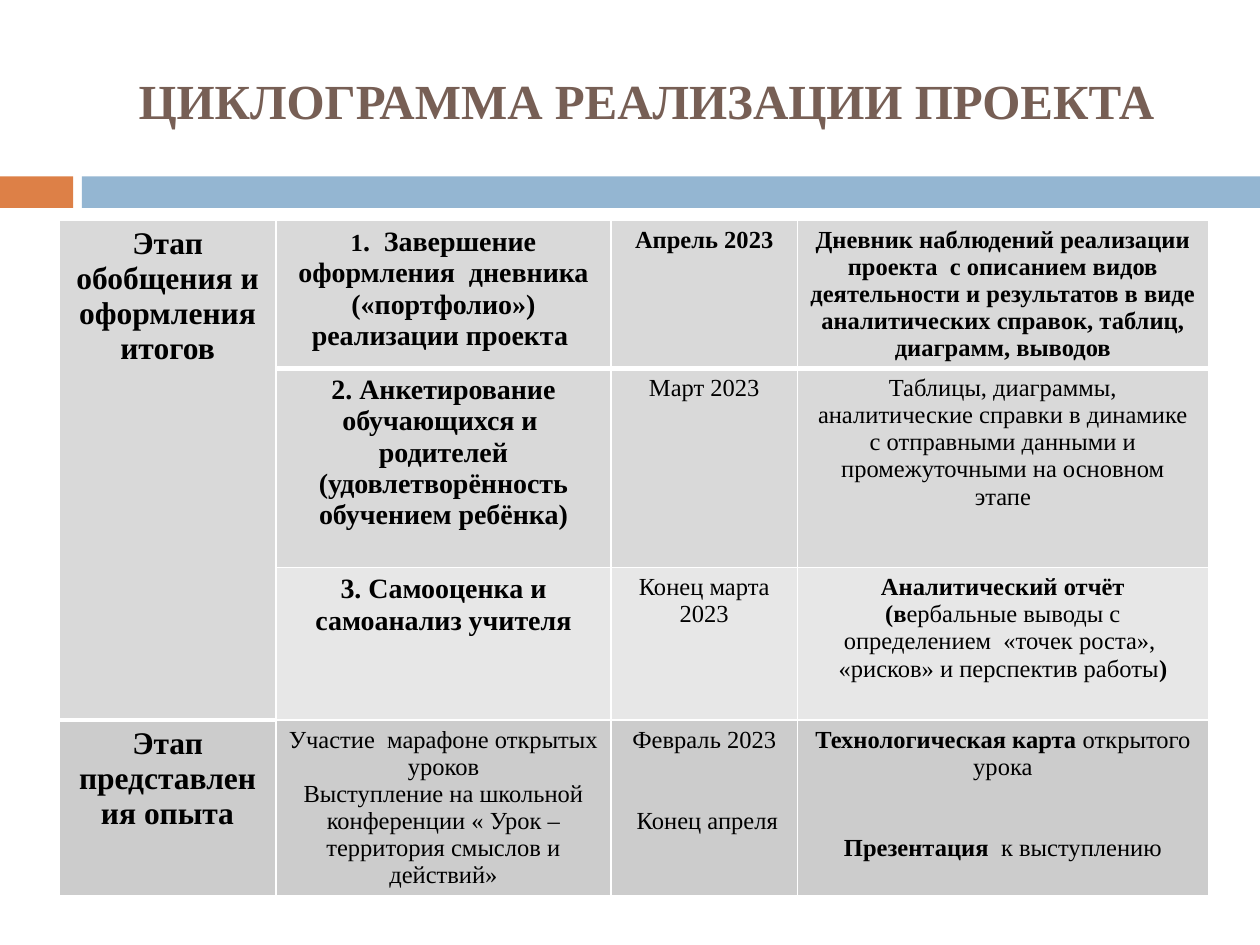
from dataclasses import dataclass

from lxml import etree
from pptx import Presentation, util as u
from pptx.dml.color import RGBColor
from pptx.enum import shapes, text
from pptx.oxml.ns import qn


@dataclass(frozen=True)
class Theme:
    font: str = "Times New Roman"
    title: str = "775F55"
    ink: str = "000000"
    line: str = "FFFFFF"
    accent: str = "DD8047"
    band: str = "94B6D2"
    grey: str = "D9D9D9"
    light: str = "E7E7E7"
    dark: str = "CCCCCC"
    head: int = 28
    stage: int = 18
    task: int = 16
    body: int = 14
    gap: int = 31
    thin: int = 1
    thick: int = 3


class Deck:
    def __init__(self, theme):
        self.theme = theme
        self.prs = Presentation()
        self.prs.slide_width, self.prs.slide_height = u.Inches(10), u.Inches(7.5)
        self.slide = self.prs.slides.add_slide(self.prs.slide_layouts[5])

    def run(self, para, words, size, bold, color):
        run = para.add_run()
        run.text = words
        font = run.font
        font.name, font.size, font.bold = self.theme.font, u.Pt(size), bold
        font.color.rgb = RGBColor.from_string(color)

    def title(self, words, *box):
        shape = self.slide.shapes.title
        shape.left, shape.top, shape.width, shape.height = map(u.Inches, box)
        frame = shape.text_frame
        frame.vertical_anchor = text.MSO_ANCHOR.MIDDLE
        para = frame.paragraphs[0]
        para.alignment = text.PP_ALIGN.CENTER
        self.run(para, words, self.theme.head, True, self.theme.title)

    def bar(self, color, *box):
        shape = self.slide.shapes.add_shape(
            shapes.MSO_SHAPE.RECTANGLE, *map(u.Inches, box))
        shape.shadow.inherit = False
        shape.fill.solid()
        shape.fill.fore_color.rgb = RGBColor.from_string(color)
        shape.line.fill.background()

    def edge(self, cell, side, width):
        """Draw one side (L, R, T or B) of a cell; call before filling it."""
        line = etree.SubElement(cell._tc.get_or_add_tcPr(), qn("a:ln" + side),
                                w=str(u.Pt(width)))
        fill = etree.SubElement(line, qn("a:solidFill"))
        etree.SubElement(fill, qn("a:srgbClr"), val=self.theme.line)

    def label(self, cell, paras):
        """Add paragraphs given as (space before, runs)."""
        frame = cell.text_frame
        for i, (space, runs) in enumerate(paras):
            para = frame.add_paragraph() if i else frame.paragraphs[0]
            para.alignment = text.PP_ALIGN.CENTER
            if space:
                para.space_before = u.Pt(space)
            for words, size, bold in runs:
                self.run(para, words, size, bold, self.theme.ink)

    def table(self, left, top, cols, rows, fills, cells, merge):
        grid = self.slide.shapes.add_table(
            len(rows), len(cols), *map(u.Inches, (left, top, sum(cols), sum(rows)))).table
        for col, width in zip(grid.columns, cols):
            col.width = u.Inches(width)
        for row, height in zip(grid.rows, rows):
            row.height = u.Inches(height)
        (r1, c1), (r2, c2) = merge
        grid.cell(r1, c1).merge(grid.cell(r2, c2))
        thin, thick = self.theme.thin, self.theme.thick
        for r, line in enumerate(cells):
            for c, paras in enumerate(line):
                cell = grid.cell(r, c)
                # A thick rule closes the first row; in the merged column, the merged cell
                last = r2 if c == c1 else 0
                self.edge(cell, "L", thin)
                self.edge(cell, "R", thin)
                self.edge(cell, "T", thick if r == last + 1 else thin)
                self.edge(cell, "B", thick if r == last or (r, c) == (r1, c1) else thin)
                cell.fill.solid()
                cell.fill.fore_color.rgb = RGBColor.from_string(fills[r])
                self.label(cell, paras)


def main():
    look = Theme()
    deck = Deck(look)

    def stage(words):
        return [(0, [(words, look.stage, True)])]

    def task(words):
        return [(0, [(words, look.task, True)])]

    def bold(words):
        return words, look.body, True

    def plain(words):
        return words, look.body, False

    def note(*runs, space=0):
        return space, runs

    cells = [
        [stage("Этап обобщения и оформления итогов"),
         [note(bold("1"), (".  Завершение оформления  дневника («портфолио») "
                           "реализации проекта ", look.task, True))],
         [note(bold("Апрель 2023"))],
         [note(bold("Дневник наблюдений реализации проекта  с описанием видов "
                    "деятельности и результатов в виде аналитических справок, "
                    "таблиц, диаграмм, выводов"))]],
        [[],
         task("2. Анкетирование обучающихся и  родителей "
              "(удовлетворённость обучением ребёнка)"),
         [note(plain("Март 2023"))],
         [note(plain("Таблицы, диаграммы, аналитические справки в динамике "
                     "с отправными данными и промежуточными на основном этапе"))]],
        [[],
         task("3. Самооценка и самоанализ учителя"),
         [note(plain("Конец марта 2023"))],
         [note(bold("Аналитический отчёт")),
          note(bold("(в"), plain("ербальные выводы с определением  «точек роста»,  "
                                 "«рисков» и перспектив работы"), bold(")"))]],
        [stage("Этап представления опыта"),
         [note(plain("Участие  марафоне открытых уроков")),
          note(plain("Выступление на школьной конференции « Урок – "
                     "территория смыслов и действий»"))],
         [note(plain("Февраль 2023")),
          note(plain(" Конец апреля"), space=look.gap)],
         [note(bold("Технологическая карта "), plain("открытого урока")),
          note(bold("Презентация"), plain("  к выступлению"), space=look.gap)]],
    ]

    deck.bar(look.accent, 0, 1.4, 0.58, 0.25)
    deck.bar(look.band, 0.65, 1.4, 9.35, 0.25)
    deck.title("ЦИКЛОГРАММА РЕАЛИЗАЦИИ ПРОЕКТА", 0.67, 0.25, 8.92, 1.08)
    deck.table(0.47, 1.75, [1.72, 2.66, 1.48, 3.26], [1.17, 1.58, 1.21, 1.38],
               [look.grey, look.grey, look.light, look.dark], cells, ((0, 0), (2, 0)))
    deck.prs.save("out.pptx")


if __name__ == "__main__":
    main()
